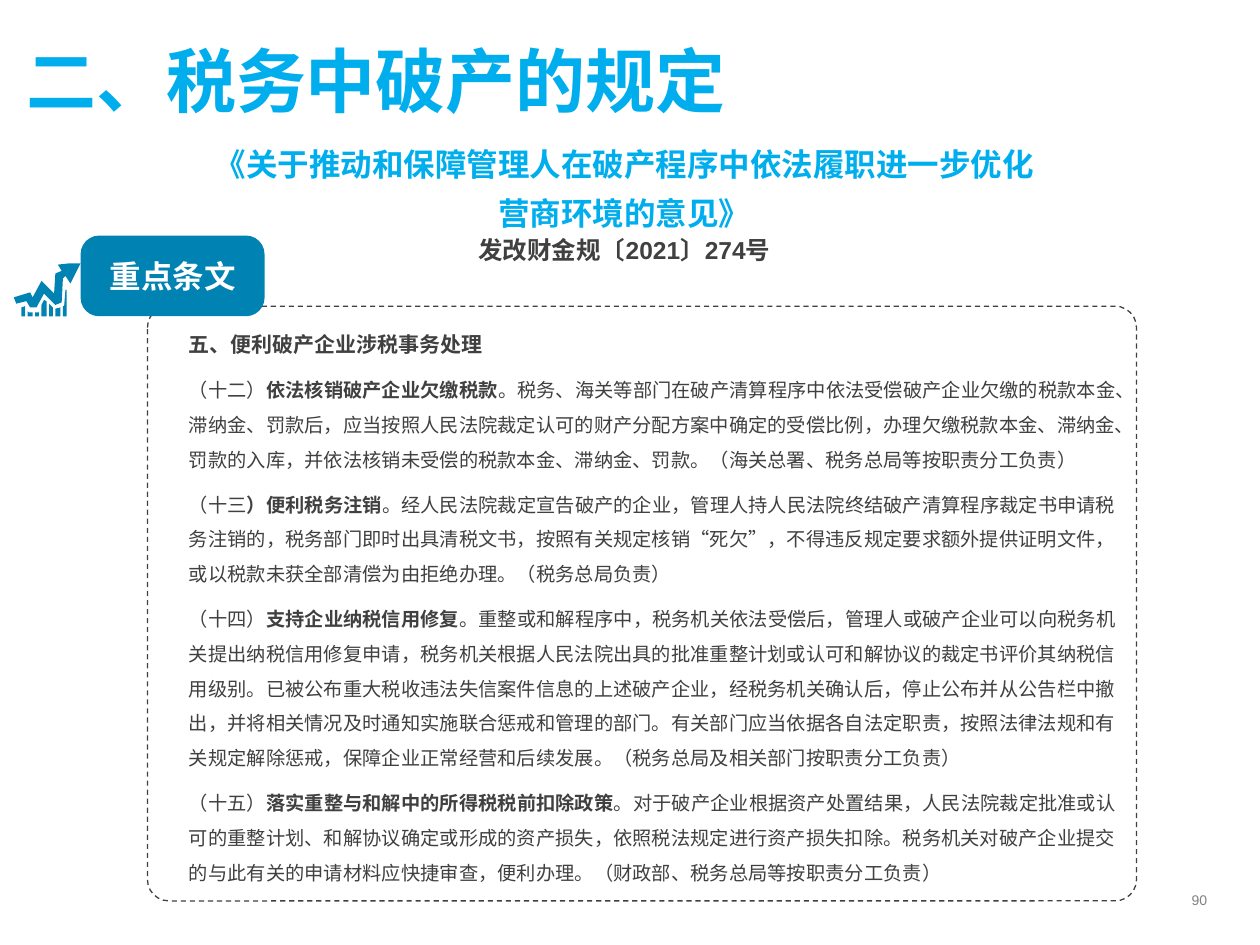
from dataclasses import dataclass

from lxml import etree
from pptx import Presentation
from pptx import util as u
from pptx.dml.color import RGBColor
from pptx.enum import dml, lang, shapes, text
from pptx.oxml import ns


@dataclass(frozen=True)
class Theme:
    cyan: str = "00AEEE"
    blue: str = "0082B3"
    dark: str = "404040"
    grey: str = "808285"
    white: str = "FFFFFF"
    cjk: str = "Noto Sans CJK SC"
    latin: str = "Arial"
    serif: str = "Times New Roman"
    title: int = 40
    heading: int = 18
    number: int = 14
    section: int = 12
    body: int = 11
    footer: int = 8


theme = Theme()
Inches = u.Inches


def add_span(para, words, size, color, font, bold=True):
    span = para.add_run()
    span.text = words
    span.font.size = u.Pt(size)
    span.font.bold = bold
    span.font.color.rgb = RGBColor.from_string(color)
    span.font.name = font
    span.font.language_id = lang.MSO_LANGUAGE_ID.SIMPLIFIED_CHINESE
    east = etree.SubElement(span.font._element, ns.qn("a:ea"))
    east.set("typeface", theme.cjk)


def add_line(place, words, size, color, font, align, bold=True):
    box = page.shapes.add_textbox(*map(Inches, place))
    box.text_frame.word_wrap = True
    para = box.text_frame.paragraphs[0]
    para.alignment = align
    add_span(para, words, size, color, font, bold)
    return para


deck = Presentation()
deck.slide_width, deck.slide_height = Inches(10), Inches(7.5)
page = deck.slides.add_slide(deck.slide_layouts[6])
align = text.PP_ALIGN

# Dashed panel with the articles
panel = page.shapes.add_shape(
    shapes.MSO_SHAPE.ROUNDED_RECTANGLE,
    Inches(1.17), Inches(2.43), Inches(7.85), Inches(4.72))
panel.adjustments[0] = 0.036
panel.shadow.inherit = False
panel.fill.background()
panel.line.color.rgb = RGBColor.from_string(theme.dark)
panel.line.width = u.Pt(0.75)
panel.line.dash_style = dml.MSO_LINE.DASH
frame = panel.text_frame
frame.word_wrap = True
frame.vertical_anchor = text.MSO_ANCHOR.TOP
frame.margin_left = Inches(0.28)

# Each article: number, bold heading, body
articles = [
    ("（十二）", "依法核销破产企业欠缴税款",
     "。税务、海关等部门在破产清算程序中依法受偿破产企业欠缴的税款本金、滞纳金、罚款后，"
     "应当按照人民法院裁定认可的财产分配方案中确定的受偿比例，办理欠缴税款本金、滞纳金、"
     "罚款的入库，并依法核销未受偿的税款本金、滞纳金、罚款。"
     "（海关总署、税务总局等按职责分工负责）"),
    ("（十三", "）便利税务注销",
     "。经人民法院裁定宣告破产的企业，管理人持人民法院终结破产清算程序裁定书申请税务注销的，"
     "税务部门即时出具清税文书，按照有关规定核销“死欠”，不得违反规定要求额外提供证明文件，"
     "或以税款未获全部清偿为由拒绝办理。（税务总局负责）"),
    ("（十四）", "支持企业纳税信用修复",
     "。重整或和解程序中，税务机关依法受偿后，管理人或破产企业可以向税务机关提出纳税信用修复申请，"
     "税务机关根据人民法院出具的批准重整计划或认可和解协议的裁定书评价其纳税信用级别。"
     "已被公布重大税收违法失信案件信息的上述破产企业，经税务机关确认后，停止公布并从公告栏中撤出，"
     "并将相关情况及时通知实施联合惩戒和管理的部门。有关部门应当依据各自法定职责，"
     "按照法律法规和有关规定解除惩戒，保障企业正常经营和后续发展。"
     "（税务总局及相关部门按职责分工负责）"),
    ("（十五）", "落实重整与和解中的所得税税前扣除政策",
     "。对于破产企业根据资产处置结果，人民法院裁定批准或认可的重整计划、和解协议确定或形成的资产损失，"
     "依照税法规定进行资产损失扣除。税务机关对破产企业提交的与此有关的申请材料应快捷审查，便利办理。"
     "（财政部、税务总局等按职责分工负责）"),
]
add_span(frame.paragraphs[0], "五、便利破产企业涉税事务处理",
         theme.section, theme.dark, theme.cjk)
for article in articles:
    para = frame.add_paragraph()
    for words, bold in zip(article, (False, True, False)):
        add_span(para, words, theme.body, theme.dark, theme.cjk, bold)
for para in frame.paragraphs:
    para.alignment = align.LEFT
    para.line_spacing = 1.5
    para.space_after = u.Pt(6)

# Title and page number
add_line((0.11, 0.25, 8.71, 0.77), "二、税务中破产的规定",
         theme.title, theme.cyan, theme.serif, align.LEFT)
add_line((9.31, 7.03, 0.37, 0.22), "90",
         theme.footer, theme.grey, theme.latin, align.RIGHT, bold=False)

# Growth icon: arrow and bars, in hundredths of an inch
arrow = [(64, 209), (56, 225), (52, 219), (50, 221), (49, 240), (44, 242),
         (35, 233), (29, 244), (24, 244), (21, 239), (13, 241), (11, 236),
         (24, 232), (26, 236), (33, 223), (43, 233), (44, 217), (49, 215),
         (46, 210), (55, 209)]
bars = [
    [(17, 251), (20, 251), (20, 243), (17, 244)],
    [(22, 251), (26, 251), (26, 248), (23, 248), (22, 247)],
    [(28, 251), (31, 251), (31, 247), (31, 248), (28, 248)],
    [(33, 251), (37, 251), (37, 239), (35, 238), (33, 242)],
    [(39, 251), (42, 251), (42, 244), (39, 241)],
    [(44, 251), (48, 251), (48, 244), (44, 245)],
    [(50, 251), (53, 251), (53, 230), (52, 230), (51, 243), (50, 243)],
]
outline = page.shapes.build_freeform(*arrow[0], scale=Inches(0.01))
outline.add_line_segments(arrow[1:])
for bar in bars:
    outline.move_to(*bar[0])
    outline.add_line_segments(bar[1:])
icon = outline.convert_to_shape()

# Key articles badge
badge = page.shapes.add_shape(
    shapes.MSO_SHAPE.ROUNDED_RECTANGLE,
    Inches(0.64), Inches(1.87), Inches(1.46), Inches(0.64))
badge.adjustments[0] = 0.229
badge.text_frame.vertical_anchor = text.MSO_ANCHOR.MIDDLE
para = badge.text_frame.paragraphs[0]
para.alignment = align.CENTER
add_span(para, "重点条文", theme.heading, theme.white, theme.cjk)
for shape in (icon, badge):
    shape.shadow.inherit = False
    shape.fill.solid()
    shape.fill.fore_color.rgb = RGBColor.from_string(theme.blue)
    shape.line.fill.background()

# Document number and name
para = add_line((1.52, 1.82, 6.87, 0.57), "发改财金规〔2021〕274号",
                theme.number, theme.dark, theme.latin, align.CENTER)
para.space_after = u.Pt(6)
para = add_line((1.52, 1.01, 6.87, 0.85),
                "《关于推动和保障管理人在破产程序中依法履职进一步优化营商环境的意见》",
                theme.heading, theme.cyan, theme.latin, align.CENTER)
para.line_spacing = 1.3

deck.save("out.pptx")
